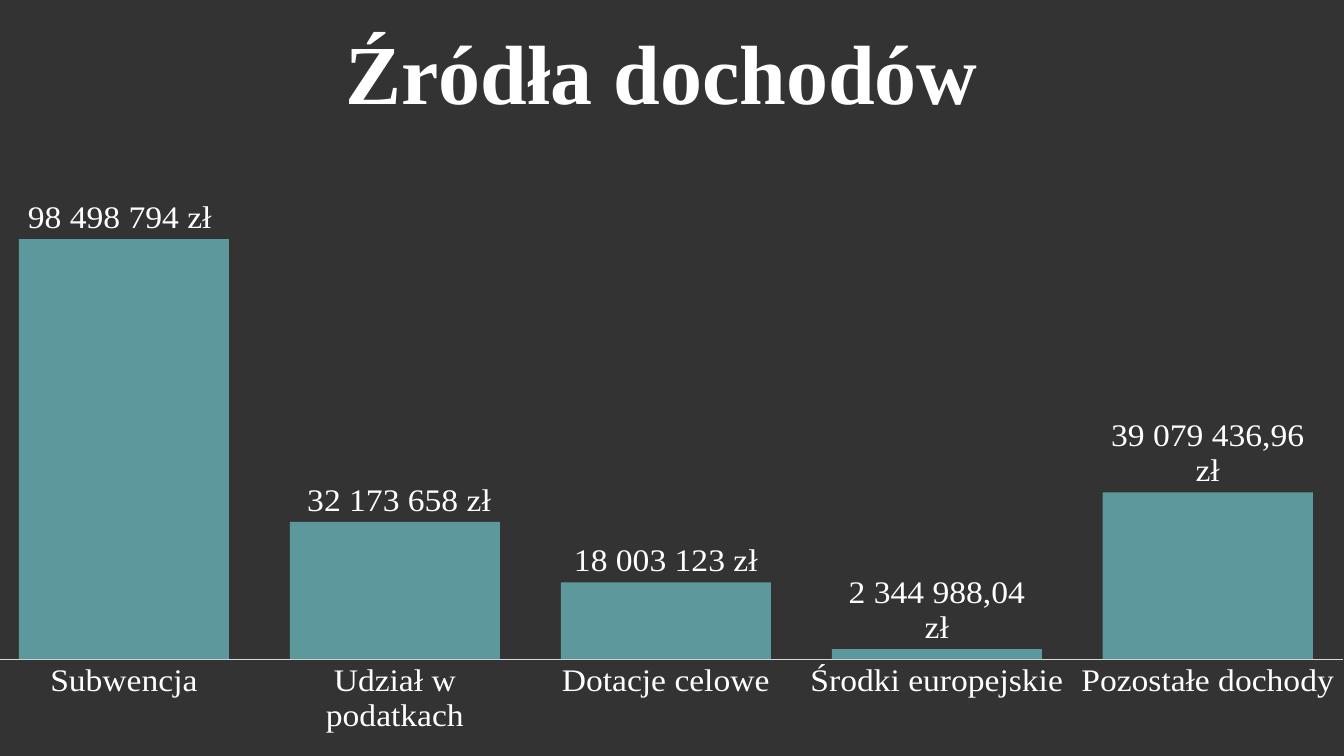
from dataclasses import dataclass

from lxml.etree import SubElement
from pptx import Presentation
from pptx.chart.data import CategoryChartData as ChartData
from pptx.dml.color import RGBColor as Rgb
from pptx.enum.chart import XL_CHART_TYPE as Kind
from pptx.enum.chart import XL_LABEL_POSITION as Place
from pptx.enum.chart import XL_TICK_MARK as Tick
from pptx.enum.text import MSO_ANCHOR as Anchor
from pptx.enum.text import PP_ALIGN as Align
from pptx.oxml.ns import qn
from pptx.util import Pt


@dataclass(frozen=True)
class Theme:
    back: Rgb = Rgb(0x33, 0x33, 0x33)
    ink: Rgb = Rgb(0xFF, 0xFF, 0xFF)
    bar: Rgb = Rgb(0x64, 0xA9, 0xAC)
    rule: Rgb = Rgb(0xD9, 0xD9, 0xD9)
    face: str = "Times New Roman"
    head: Pt = Pt(60)
    body: Pt = Pt(24)
    clear: int = 87


THEME = Theme()
INCOME = [
    ("Subwencja", 98498794, "98 498 794 zł "),
    ("Udział w podatkach", 32173658, " 32 173 658 zł"),
    ("Dotacje celowe", 18003123, "18 003 123 zł"),
    ("Środki europejskie", 2344988.04, "2 344 988,04 zł"),
    ("Pozostałe dochody ", 39079436.96, "39 079 436,96 zł"),
]


def apply(item, **values):
    for name, value in values.items():
        setattr(item, name, value)


def style(font, size, bold=False):
    apply(font, name=THEME.face, size=size, bold=bold)
    font.color.rgb = THEME.ink


def add_title(slide, text, box):
    frame = slide.shapes.add_textbox(*box).text_frame
    apply(frame, word_wrap=True, vertical_anchor=Anchor.TOP,
          margin_right=Pt(22))
    para = frame.paragraphs[0]
    apply(para, alignment=Align.CENTER, line_spacing=0.9,
          space_before=Pt(10))
    run = para.add_run()
    run.text = text
    style(run.font, THEME.head, True)


def set_plot(chart, **area):
    """Fix the inner plot area as fractions of the chart."""
    plot = chart._chartSpace.chart.plotArea
    layout = plot.find(qn("c:layout"))
    if layout is None:
        layout = SubElement(plot, qn("c:layout"))
        plot.insert(0, layout)
    manual = SubElement(layout, qn("c:manualLayout"))
    modes = dict(layoutTarget="inner", xMode="edge", yMode="edge")
    for tag, value in {**modes, **area}.items():
        SubElement(manual, qn(f"c:{tag}")).set("val", str(value))


def fill_bars(series):
    series.format.fill.solid()
    series.format.fill.fore_color.rgb = THEME.bar
    tint = next(series._element.iter(qn("a:srgbClr")))
    SubElement(tint, qn("a:alpha")).set("val", str(THEME.clear * 1000))


def label_bars(series, texts):
    labels = series.data_labels
    apply(labels, show_value=True, position=Place.OUTSIDE_END,
          number_format="#,##0.00", number_format_is_linked=False)
    style(labels.font, THEME.body)
    for index, text in enumerate(texts):
        label = series.points[index].data_label
        run = label.text_frame.paragraphs[0].add_run()
        run.text = text
        style(run.font, THEME.body)
        label.position = Place.OUTSIDE_END


def add_bars(slide, rows, box):
    names, values, texts = zip(*rows)
    data = ChartData(number_format="#,##0.00")
    data.categories = names
    data.add_series("Series 1", values)
    chart = slide.shapes.add_chart(Kind.COLUMN_CLUSTERED, *box, data).chart
    apply(chart, has_legend=False, has_title=False)
    style(chart.font, THEME.body)
    apply(chart.value_axis, visible=False, has_major_gridlines=False,
          minimum_scale=0, maximum_scale=120_000_000)
    axis = chart.category_axis
    apply(axis, major_tick_mark=Tick.NONE, minor_tick_mark=Tick.NONE)
    style(axis.tick_labels.font, THEME.body)
    axis.format.line.color.rgb = THEME.rule
    axis.format.line.width = Pt(0.75)
    plot = chart.plots[0]
    apply(plot, gap_width=29, overlap=-100, vary_by_categories=False)
    fill_bars(plot.series[0])
    label_bars(plot.series[0], texts)
    set_plot(chart, x=0, y=0.026, w=1, h=0.912)


def main():
    deck = Presentation()
    apply(deck, slide_width=Pt(960), slide_height=Pt(540))
    slide = deck.slides.add_slide(deck.slide_layouts[6])
    slide.background.fill.solid()
    slide.background.fill.fore_color.rgb = THEME.back
    add_title(slide, "Źródła dochodów",
              (Pt(37.5), Pt(19.5), Pt(885), Pt(76)))
    add_bars(slide, INCOME, (Pt(-8.6), Pt(95), Pt(968.4), Pt(429)))
    deck.save("out.pptx")


if __name__ == "__main__":
    main()
